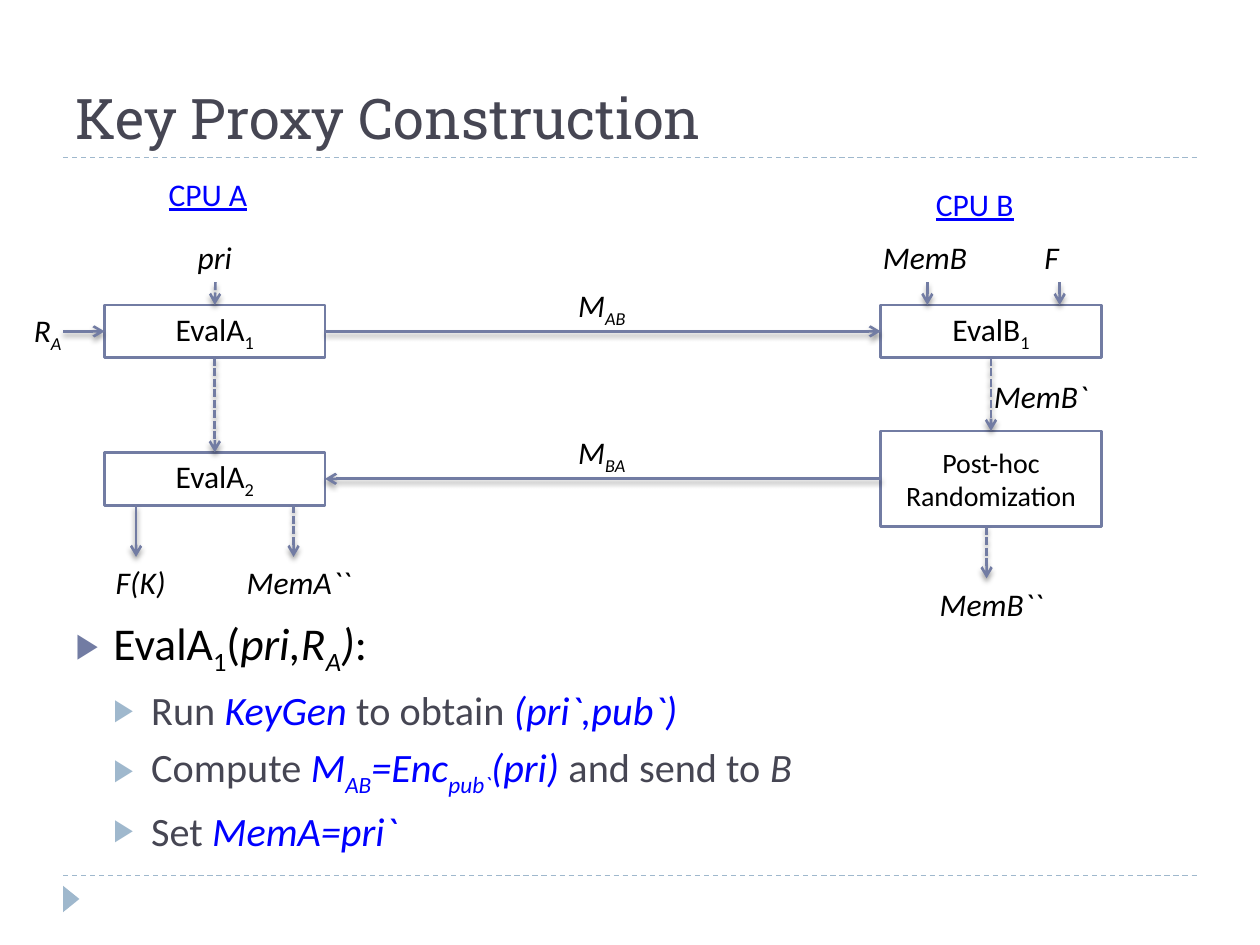
from typing import NamedTuple, Optional

import pptx
import pptx.dml.color
import pptx.enum.dml
import pptx.enum.shapes
import pptx.enum.text
import pptx.oxml
import pptx.oxml.ns
import pptx.util

PX = 9144  # EMU per px, 100 px to the inch
FONT = "Calibri"
COLORS = {"ink": "000000", "dark": "464653", "blue": "0000FF", "white": "FFFFFF",
          "line": "727CA3", "pale": "9FB8CD"}
DASH = pptx.enum.dml.MSO_LINE
TOP, LEFT, BOTTOM, RIGHT = range(4)
NS = pptx.oxml.ns.nsdecls("a")


class Run(NamedTuple):
    text: str
    color: str = "ink"
    italic: bool = False
    sub: bool = False


class Label(NamedTuple):
    x: int
    y: int
    w: int
    text: str
    sub: str = ""


class Box(NamedTuple):
    name: str
    x: int
    y: int
    h: int
    text: str
    sub: str = ""
    size: int = 18


class Arrow(NamedTuple):
    start: tuple[int, int]
    end: tuple[int, int]
    dashed: bool = False
    source: Optional[tuple[str, int]] = None  # box name and side
    target: Optional[tuple[str, int]] = None


class Item(NamedTuple):
    level: int
    runs: list[Run]


def rgb(name: str) -> pptx.dml.color.RGBColor:
    return pptx.dml.color.RGBColor.from_string(COLORS[name])


def px(*values: int) -> list[pptx.util.Emu]:
    return [pptx.util.Emu(v * PX) for v in values]


def add_xml(parent, xml: str) -> None:
    tag, _, rest = xml.partition(" ") if " " in xml.split(">")[0] else xml.partition("/")
    sep = " " if " " in xml.split(">")[0] else "/"
    parent.append(pptx.oxml.parse_xml(f"{tag} {NS}{sep}{rest}"))


def add_runs(p, runs: list[Run], size: int) -> None:
    for run in runs:
        r = p.add_run()
        r.text = run.text
        r.font.name, r.font.size = FONT, pptx.util.Pt(size)
        r.font.italic = run.italic
        r.font.color.rgb = rgb(run.color)
        if run.sub:
            r.font._element.set("baseline", "-25000")


def with_sub(text: str, sub: str, italic: bool) -> list[Run]:
    runs = [Run(text, italic=italic)]
    return runs + [Run(sub, italic=italic, sub=True)] if sub else runs


def add_label(slide, label: Label, heading: bool = False) -> None:
    sp = slide.shapes.add_textbox(*px(label.x, label.y, label.w, 40))
    tf = sp.text_frame
    tf.word_wrap = False
    tf.auto_size = pptx.enum.text.MSO_AUTO_SIZE.SHAPE_TO_FIT_TEXT
    p = tf.paragraphs[0]
    add_runs(p, [Run(label.text, "blue")] if heading
             else with_sub(label.text, label.sub, True), 18)
    if heading:
        p.runs[0].font.underline = True


def add_box(slide, box: Box):
    sp = slide.shapes.add_shape(pptx.enum.shapes.MSO_SHAPE.RECTANGLE,
                                *px(box.x, box.y, 175, box.h))
    sp.shadow.inherit = False
    sp.fill.solid()
    sp.fill.fore_color.rgb = rgb("white")
    sp.line.color.rgb = rgb("line")
    sp.line.width = pptx.util.Pt(1.5)
    tf = sp.text_frame
    tf.vertical_anchor = pptx.enum.text.MSO_ANCHOR.MIDDLE
    p = tf.paragraphs[0]
    p.alignment = pptx.enum.text.PP_ALIGN.CENTER
    add_runs(p, with_sub(box.text, box.sub, False), box.size)
    return sp


def add_line(slide, start: tuple[int, int], end: tuple[int, int],
             color: str, width: float, dash=None):
    cxn = slide.shapes.add_connector(pptx.enum.shapes.MSO_CONNECTOR.STRAIGHT,
                                     *px(*start, *end))
    cxn.line.color.rgb = rgb(color)
    cxn.line.width = pptx.util.Pt(width)
    if dash:
        cxn.line.dash_style = dash
    return cxn


def add_arrow(slide, arrow: Arrow, boxes: dict) -> None:
    cxn = add_line(slide, arrow.start, arrow.end, "line", 1.5,
                   DASH.SQUARE_DOT if arrow.dashed else None)
    if arrow.source:
        cxn.begin_connect(boxes[arrow.source[0]], arrow.source[1])
    if arrow.target:
        cxn.end_connect(boxes[arrow.target[0]], arrow.target[1])
    add_xml(cxn.line._get_or_add_ln(), '<a:tailEnd type="arrow"/>')
    add_xml(cxn._element.spPr,
            '<a:effectLst ><a:outerShdw blurRad="38100" dist="25400" dir="5400000" '
            'rotWithShape="0"><a:srgbClr val="000000"><a:alpha val="40000"/></a:srgbClr>'
            '</a:outerShdw></a:effectLst>')


def add_item(p, item: Item) -> None:
    p.level = item.level
    p.space_before = pptx.util.Pt(6 - item.level)
    add_runs(p, item.runs, 23 if item.level else 26)
    pPr = p._p.get_or_add_pPr()
    pPr.set("marL", str(30 * PX * (item.level + 1)))
    pPr.set("indent", str(-30 * PX))
    color = COLORS["pale" if item.level else "line"]
    add_xml(pPr, f'<a:buClr ><a:srgbClr val="{color}"/></a:buClr>')
    add_xml(pPr, '<a:buSzPct val="76000"/>')
    add_xml(pPr, '<a:buChar char="▶"/>')


HEADINGS = [Label(124, 134, 92, "CPU A"), Label(733, 142, 92, "CPU B")]
LABELS = [
    Label(147, 184, 48, "pri"), Label(17, 242, 47, "R", "A"),
    Label(449, 222, 61, "M", "AB"), Label(449, 339, 62, "M", "BA"),
    Label(691, 184, 90, "MemB"), Label(819, 184, 35, "F"),
    Label(779, 294, 102, "MemB`"), Label(736, 459, 110, "MemB``"),
    Label(186, 442, 110, "MemA``"), Label(82, 442, 64, "F(K)"),
]
BOXES = [
    Box("A1", 83, 242, 42, "EvalA", "1"), Box("B1", 699, 242, 42, "EvalB", "1"),
    Box("A2", 83, 359, 42, "EvalA", "2"),
    Box("post", 699, 342, 76, "Post-hoc Randomization", size=16),
]
ARROWS = [
    Arrow((171, 224), (171, 242), True, target=("A1", TOP)),
    Arrow((50, 263), (83, 263), target=("A1", LEFT)),
    Arrow((258, 263), (699, 263), source=("A1", RIGHT), target=("B1", LEFT)),
    Arrow((736, 224), (736, 242)),
    Arrow((841, 224), (841, 242)),
    Arrow((170, 284), (170, 359), True, ("A1", BOTTOM), ("A2", TOP)),
    Arrow((787, 284), (787, 342), True, ("B1", BOTTOM), ("post", TOP)),
    Arrow((699, 380), (258, 380), source=("post", LEFT), target=("A2", RIGHT)),
    Arrow((783, 418), (783, 459), True),
    Arrow((233, 401), (233, 442), True),
    Arrow((108, 401), (108, 442)),
]
ITEMS = [
    Item(0, [Run("EvalA"), Run("1", sub=True), Run("("), Run("pri,R", italic=True),
             Run("A", italic=True, sub=True), Run(")", italic=True), Run(":")]),
    Item(1, [Run("Run ", "dark"), Run("KeyGen ", "blue", True),
             Run("to obtain ", "dark"), Run("(pri`,pub`)", "blue", True)]),
    Item(1, [Run("Compute ", "dark"), Run("M", "blue", True),
             Run("AB", "blue", True, True), Run("=Enc", "blue", True),
             Run("pub`", "blue", True, True), Run("(pri) ", "blue", True),
             Run("and send to", "dark"), Run(" B", "dark", True)]),
    Item(1, [Run("Set ", "dark"), Run("MemA=pri`", "blue", True)]),
]


def main() -> None:
    prs = pptx.Presentation()
    prs.slide_width, prs.slide_height = px(1000, 750)
    slide = prs.slides.add_slide(prs.slide_layouts[1])
    title, body = slide.placeholders

    # Rules and corner marker
    for y in (695, 125):
        rule = add_line(slide, (50, y), (950, y), "pale", 0.75, DASH.DASH)
        add_xml(rule._element.spPr, "<a:effectLst/>")
    marker = slide.shapes.add_shape(pptx.enum.shapes.MSO_SHAPE.ISOSCELES_TRIANGLE,
                                    *px(46, 707, 21, 13))
    marker.rotation = 90
    marker.shadow.inherit = False
    marker.fill.solid()
    marker.fill.fore_color.rgb = rgb("pale")
    marker.line.fill.background()

    # Title
    title.left, title.top, title.width, title.height = px(50, 17, 900, 108)
    tf = title.text_frame
    tf.text = "Key Proxy Construction"
    tf.vertical_anchor = pptx.enum.text.MSO_ANCHOR.BOTTOM
    p = tf.paragraphs[0]
    p.alignment = pptx.enum.text.PP_ALIGN.LEFT
    font = p.runs[0].font
    font.name, font.size, font.color.rgb = "Roboto Slab", pptx.util.Pt(32), rgb("dark")

    # Protocol diagram
    boxes = {box.name: add_box(slide, box) for box in BOXES}
    for arrow in ARROWS:
        add_arrow(slide, arrow, boxes)
    for label in HEADINGS:
        add_label(slide, label, heading=True)
    for label in LABELS:
        add_label(slide, label)

    # Steps of EvalA
    body.left, body.top, body.width, body.height = px(50, 483, 900, 217)
    tf = body.text_frame
    for i, item in enumerate(ITEMS):
        add_item(tf.add_paragraph() if i else tf.paragraphs[0], item)

    prs.save("out.pptx")


if __name__ == "__main__":
    main()
